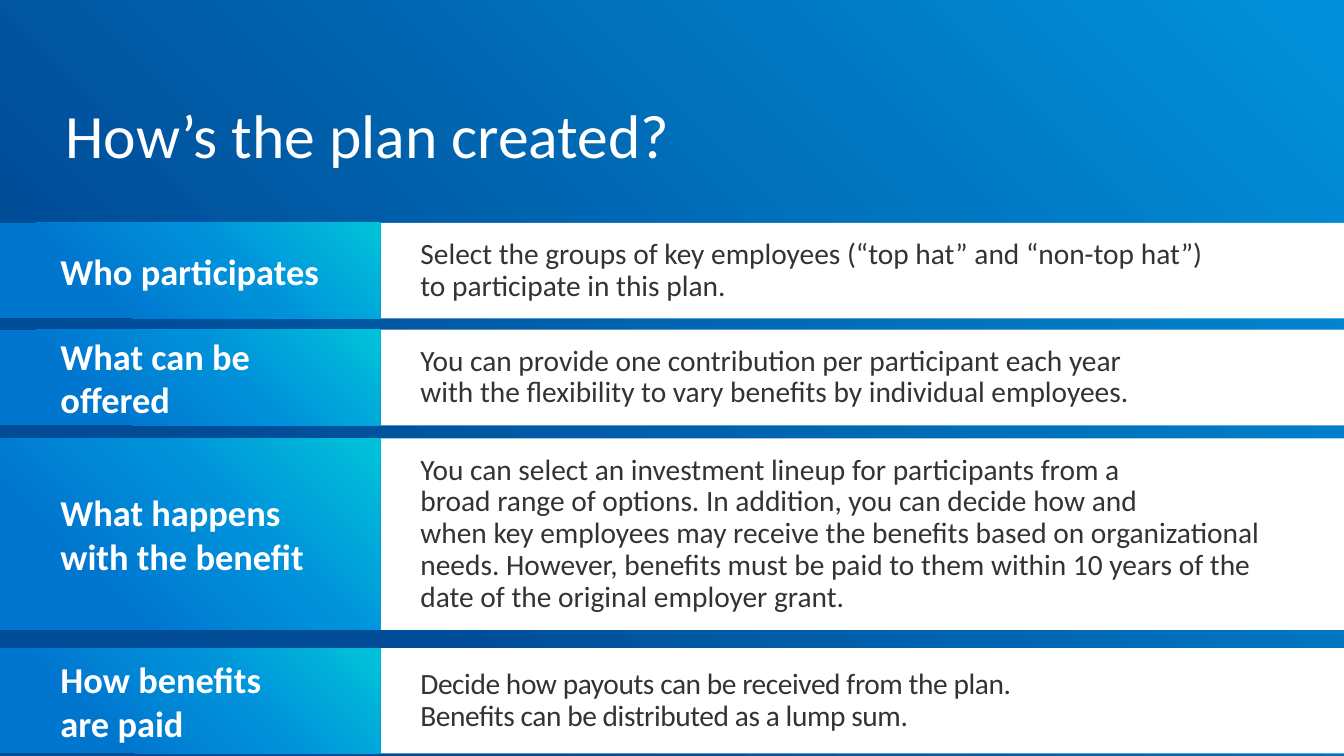
from lxml import etree
from pptx import Presentation
from pptx.dml.color import RGBColor
from pptx.enum.shapes import MSO_SHAPE
from pptx.enum.text import MSO_ANCHOR, PP_ALIGN
from pptx.oxml.ns import qn
from pptx.util import Inches, Pt

RECTANGLE = MSO_SHAPE.RECTANGLE
MIDDLE, TOP = MSO_ANCHOR.MIDDLE, MSO_ANCHOR.TOP
LEFT = PP_ALIGN.LEFT

WIDTH, HEIGHT = 13.33, 7.5
LABEL_WIDTH = 3.77
FIRST_TOP = 2.21
BAND = 0.95
FONT = "Calibri"
COLORS = {
    "navy": "004C97",
    "blue": "0076CF",
    "sky": "0091DA",
    "aqua": "00C3D9",
    "white": "FFFFFF",
    "text": "333333",
}
PAGE_STOPS = [(25, "navy"), (99, "sky")]
LABEL_STOPS = [(25, "blue"), (60, "sky"), (100, "aqua")]

# gap above in inches, height in bands, label, description, letter spacing
ROWS = [
    (0, 1, "Who participates",
     "Select the groups of key employees (“top hat” and “non-top hat”)\n"
     "to participate in this plan.", 0),
    (0.11, 1, "What can be offered",
     "You can provide one contribution per participant each year\n"
     "with the flexibility to vary benefits by individual employees.", 0),
    (0.13, 2, "What happens with the benefit",
     "You can select an investment lineup for participants from a\n"
     "broad range of options. In addition, you can decide how and\n"
     "when key employees may receive the benefits based on organizational "
     "needs. However, benefits must be paid to them within 10 years of the "
     "date of the original employer grant.", 0),
    (0.18, 1.1, "How benefits\nare paid",
     "Decide how payouts can be received from the plan.\n"
     "Benefits can be distributed as a lump sum.", -0.3),
]


def rgb(name):
    return RGBColor.from_string(COLORS[name])


def add_rectangle(page, left, top, width, height):
    shape = page.shapes.add_shape(
        RECTANGLE, Inches(left), Inches(top), Inches(width), Inches(height))
    shape.shadow.inherit = False
    shape.line.fill.background()
    return shape


def fill_gradient(shape, stops):
    shape.fill.gradient()
    shape.fill.gradient_angle = 45
    stop_list = shape.element.spPr.find(".//" + qn("a:gsLst"))
    for stop in list(stop_list):
        stop_list.remove(stop)
    for percent, name in stops:
        stop = etree.SubElement(stop_list, qn("a:gs"), pos=str(percent * 1000))
        etree.SubElement(stop, qn("a:srgbClr"), val=COLORS[name])


def fill_solid(shape, name):
    shape.fill.solid()
    shape.fill.fore_color.rgb = rgb(name)


def write_text(shape, text, size, color, insets, anchor=MIDDLE, bold=False):
    frame = shape.text_frame
    frame.word_wrap = True
    frame.vertical_anchor = anchor
    side_left, side_top, side_right, side_bottom = map(Inches, insets)
    frame.margin_left, frame.margin_right = side_left, side_right
    frame.margin_top, frame.margin_bottom = side_top, side_bottom
    para = frame.paragraphs[0]
    para.text = text
    para.alignment = LEFT
    para.font.name = FONT
    para.font.size = Pt(size)
    para.font.bold = bold
    para.font.color.rgb = rgb(color)
    return para


def add_title(page, text):
    box = page.shapes.add_textbox(
        Inches(0.65), Inches(0.96), Inches(12), Inches(0.69))
    write_text(box, text, 44, "white", (0, 0, 0, 0), TOP)


def add_description(page, top, height, text, spacing):
    panel = add_rectangle(page, LABEL_WIDTH, top, WIDTH - LABEL_WIDTH, height)
    fill_solid(panel, "white")
    para = write_text(panel, text, 21, "text", (0.4, 0.4, 0.4, 0.4))
    para.line_spacing = 0.9
    para.space_after = Pt(8)
    if spacing:
        for span in para.runs:
            span.font.bold = False
            span.font._element.set("spc", str(round(spacing * 100)))


def add_label(page, top, height, text):
    label = add_rectangle(page, 0, top, LABEL_WIDTH, height)
    fill_gradient(label, LABEL_STOPS)
    write_text(label, text, 26, "white", (0.6, 0.05, 0.4, 0.05), bold=True)


def main():
    deck = Presentation()
    deck.slide_width, deck.slide_height = Inches(WIDTH), Inches(HEIGHT)
    page = deck.slides.add_slide(deck.slide_layouts[6])
    fill_gradient(add_rectangle(page, 0, 0, WIDTH, HEIGHT), PAGE_STOPS)
    add_title(page, "How’s the plan created?")
    top = FIRST_TOP
    for gap, bands, label, description, spacing in ROWS:
        top += gap
        height = bands * BAND
        add_description(page, top, height, description, spacing)
        add_label(page, top, height, label)
        top += height
    deck.save("out.pptx")


if __name__ == "__main__":
    main()
